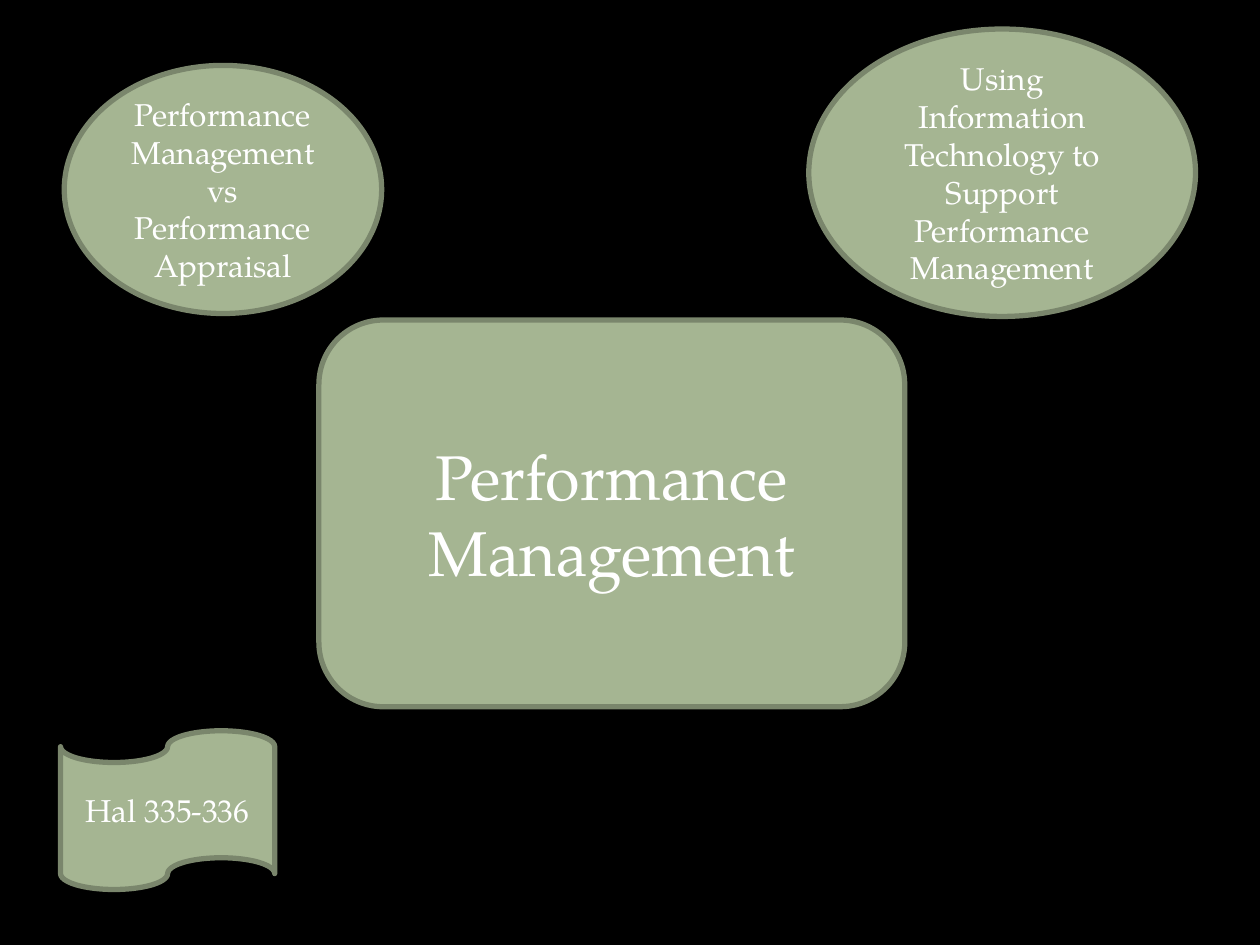
from dataclasses import dataclass

from pptx import Presentation
from pptx.dml.color import RGBColor
from pptx.enum.shapes import MSO_SHAPE
from pptx.enum.text import MSO_ANCHOR, PP_ALIGN
from pptx.util import Pt

ROUNDED = MSO_SHAPE.ROUNDED_RECTANGLE
OVAL = MSO_SHAPE.OVAL
TAPE = MSO_SHAPE.FLOWCHART_PUNCHED_TAPE
MIDDLE = MSO_ANCHOR.MIDDLE
CENTER = PP_ALIGN.CENTER
BLANK_LAYOUT = 6


@dataclass(frozen=True)
class Theme:
    background: RGBColor = RGBColor(0x00, 0x00, 0x00)
    fill: RGBColor = RGBColor(0xA5, 0xB5, 0x92)
    outline: RGBColor = RGBColor(0x7A, 0x86, 0x6C)
    text: RGBColor = RGBColor(0xFF, 0xFF, 0xFF)
    font: str = "TeX Gyre Pagella"
    topic_size: int = 36
    label_size: int = 18
    line_width: int = 3


THEME = Theme()


def write_text(tf, text, *, size, color=THEME.text, font=THEME.font, align=CENTER):
    """Write one paragraph for each line of text."""
    tf.word_wrap = True
    tf.vertical_anchor = MIDDLE
    for i, line in enumerate(text.split("\n")):
        p = tf.add_paragraph() if i else tf.paragraphs[0]
        p.alignment = align
        r = p.add_run()
        r.text = line
        r.font.name = font
        r.font.size = Pt(size)
        r.font.color.rgb = color


def add_node(s, kind, box, text, size=THEME.label_size):
    """Add an outlined shape with centred text in box (left, top, width, height)."""
    sp = s.shapes.add_shape(kind, *(Pt(v) for v in box))
    sp.shadow.inherit = False
    sp.fill.solid()
    sp.fill.fore_color.rgb = THEME.fill
    sp.line.color.rgb = THEME.outline
    sp.line.width = Pt(THEME.line_width)
    write_text(sp.text_frame, text, size=size)


def build_topic_map(s):
    # Central topic
    add_node(s, ROUNDED, (182.2, 182.9, 334.8, 221), "Performance Management",
             THEME.topic_size)
    # Subtopics
    add_node(s, OVAL, (36.7, 37.4, 181.4, 141.8),
             "Performance Management vs\nPerformance Appraisal")
    add_node(s, OVAL, (462.2, 16.6, 221, 164.2),
             "Using Information Technology to Support Performance Management")
    # Page reference
    add_node(s, TAPE, (34.6, 417.6, 122.4, 90.7), "Hal 335-336")


def main():
    prs = Presentation()
    prs.slide_width, prs.slide_height = Pt(720), Pt(540)
    s = prs.slides.add_slide(prs.slide_layouts[BLANK_LAYOUT])
    s.background.fill.solid()
    s.background.fill.fore_color.rgb = THEME.background
    build_topic_map(s)
    prs.save("out.pptx")


if __name__ == "__main__":
    main()
